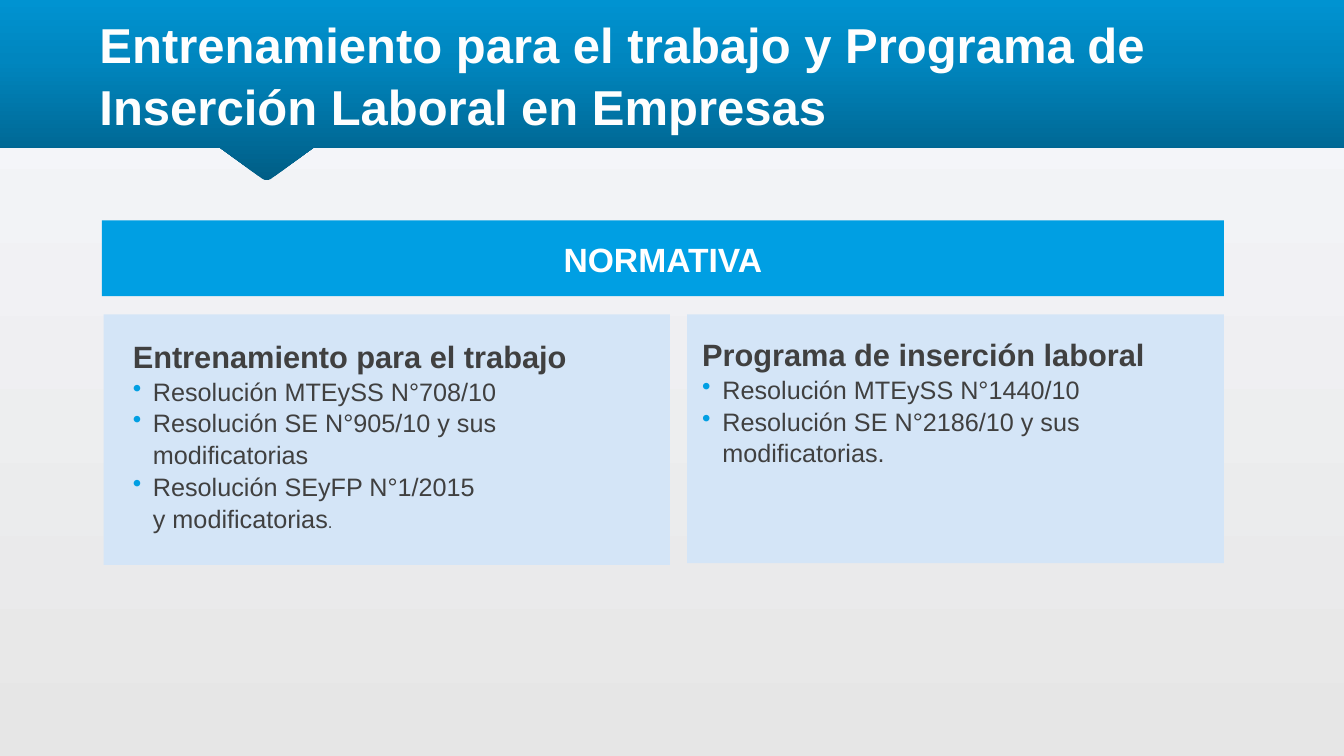
import pptx
import pptx.dml.color
import pptx.enum.shapes
import pptx.enum.text
import pptx.oxml.ns
import pptx.util
from lxml import etree

Pt = pptx.util.Pt
qn = pptx.oxml.ns.qn
ALIGN = pptx.enum.text.PP_ALIGN
ANCHOR = pptx.enum.text.MSO_ANCHOR

COLORS = {
    "blue": "009FE3", "bullet": "019FE3", "panel": "D4E5F7",
    "text": "404040", "title": "FEFEFE", "white": "FFFFFF",
    "banner_top": "0093D1", "banner_mid": "0086BF", "banner_low": "005E86",
    "page_top": "F6F7FB", "page_low": "E6E6E6",
}
INDENT = 14.4


def rgb(name):
    """Return the named colour."""
    return pptx.dml.color.RGBColor.from_string(COLORS[name])


def set_gradient(fill, element, stops, angle):
    """Fill with a linear gradient of (percent, colour) stops."""
    fill.gradient()
    fill.gradient_angle = angle
    stop_list = element.find(".//" + qn("a:gsLst"))
    for old in list(stop_list):
        stop_list.remove(old)
    for percent, color in stops:
        gs = etree.SubElement(stop_list, qn("a:gs"), pos=str(percent * 1000))
        etree.SubElement(gs, qn("a:srgbClr"), val=COLORS[color])


def add_banner(s):
    """Draw the header band with its rounded pointer."""
    points = [(960, 0), (0, 0), (0, 105.5), (157, 105.5), (187.5, 127.8),
              (189.5, 128.7), (191.5, 128.7), (193.5, 127.8),
              (224, 105.5), (960, 105.5)]
    points = [(Pt(x), Pt(y)) for x, y in points]
    builder = s.shapes.build_freeform(*points[0])
    builder.add_line_segments(points[1:], close=True)
    sp = builder.convert_to_shape()
    sp.shadow.inherit = False
    sp.line.fill.background()
    stops = [(0, "banner_low"), (67, "banner_mid"), (100, "banner_top")]
    set_gradient(sp.fill, sp.element, stops, 90)


def add_rect(s, left, top, width, height, color):
    """Add a flat rectangle."""
    sp = s.shapes.add_shape(pptx.enum.shapes.MSO_SHAPE.RECTANGLE,
                            Pt(left), Pt(top), Pt(width), Pt(height))
    sp.shadow.inherit = False
    sp.fill.solid()
    sp.fill.fore_color.rgb = rgb(color)
    sp.line.fill.background()
    return sp


def add_text_box(s, left, top, width, height):
    """Add a wrapping text box and return its text frame."""
    tf = s.shapes.add_textbox(Pt(left), Pt(top), Pt(width), Pt(height)).text_frame
    tf.word_wrap = True
    return tf


def write(p, text, size, color, bold=False):
    """Write one paragraph and return its run."""
    r = p.add_run()
    r.text = text
    p.line_spacing = 1.05
    p.font.name = "Arial"
    p.font.size = Pt(size)
    p.font.bold = bold
    p.font.color.rgb = rgb(color)
    return r


def set_indent(p, bullet):
    """Indent a paragraph, hanging a bullet if asked."""
    pPr = p._p.get_or_add_pPr()
    pPr.set("marL", str(Pt(INDENT)))
    if not bullet:
        return
    pPr.set("indent", str(-Pt(INDENT)))
    bu_color = etree.Element(qn("a:buClr"))
    etree.SubElement(bu_color, qn("a:srgbClr"), val=COLORS["bullet"])
    bu_char = etree.Element(qn("a:buChar"), char="•")
    default = pPr.find(qn("a:defRPr"))
    default.addprevious(bu_color)
    default.addprevious(bu_char)


def add_list(s, box, heading, items):
    """Add a heading with bulleted items and return the text frame."""
    tf = add_text_box(s, *box)
    write(tf.paragraphs[0], heading, 22, "text", bold=True)
    for item in items:
        p = tf.add_paragraph()
        write(p, item, 18, "text")
        set_indent(p, bullet=True)
    return tf


def main():
    """Build the slide."""
    prs = pptx.Presentation()
    prs.slide_width, prs.slide_height = Pt(960), Pt(540)
    s = prs.slides.add_slide(prs.slide_layouts[6])
    set_gradient(s.background.fill, s.element,
                 [(3, "page_top"), (100, "page_low")], 270)
    add_banner(s)

    tf = add_rect(s, 72.7, 157.5, 801.5, 54, "blue").text_frame
    tf.vertical_anchor = ANCHOR.MIDDLE
    p = tf.paragraphs[0]
    p.alignment = ALIGN.CENTER
    write(p, "NORMATIVA", 24, "white", bold=True)

    add_rect(s, 74, 224.5, 404.5, 179, "panel")
    tf = add_list(s, (87.8, 236.2, 379.5, 143.3), "Entrenamiento para el trabajo",
                  ["Resolución MTEySS N°708/10",
                   "Resolución SE N°905/10 y sus modificatorias",
                   "Resolución SEyFP N°1/2015"])
    p = tf.add_paragraph()
    write(p, "y modificatorias", 18, "text")
    set_indent(p, bullet=False)
    r = p.add_run()
    r.text = "."
    r.font.size = Pt(12)

    add_rect(s, 490.8, 224.5, 383.4, 177.8, "panel")
    add_list(s, (494.5, 235, 366.5, 99.4), "Programa de inserción laboral",
             ["Resolución MTEySS N°1440/10",
              "Resolución SE N°2186/10 y sus modificatorias."])

    tf = add_text_box(s, 64, 14.4, 832.3, 76.3)
    tf.vertical_anchor = ANCHOR.MIDDLE
    write(tf.paragraphs[0],
          "Entrenamiento para el trabajo y Programa de Inserción Laboral en Empresas",
          35, "title", bold=True)
    prs.save("out.pptx")


if __name__ == "__main__":
    main()
